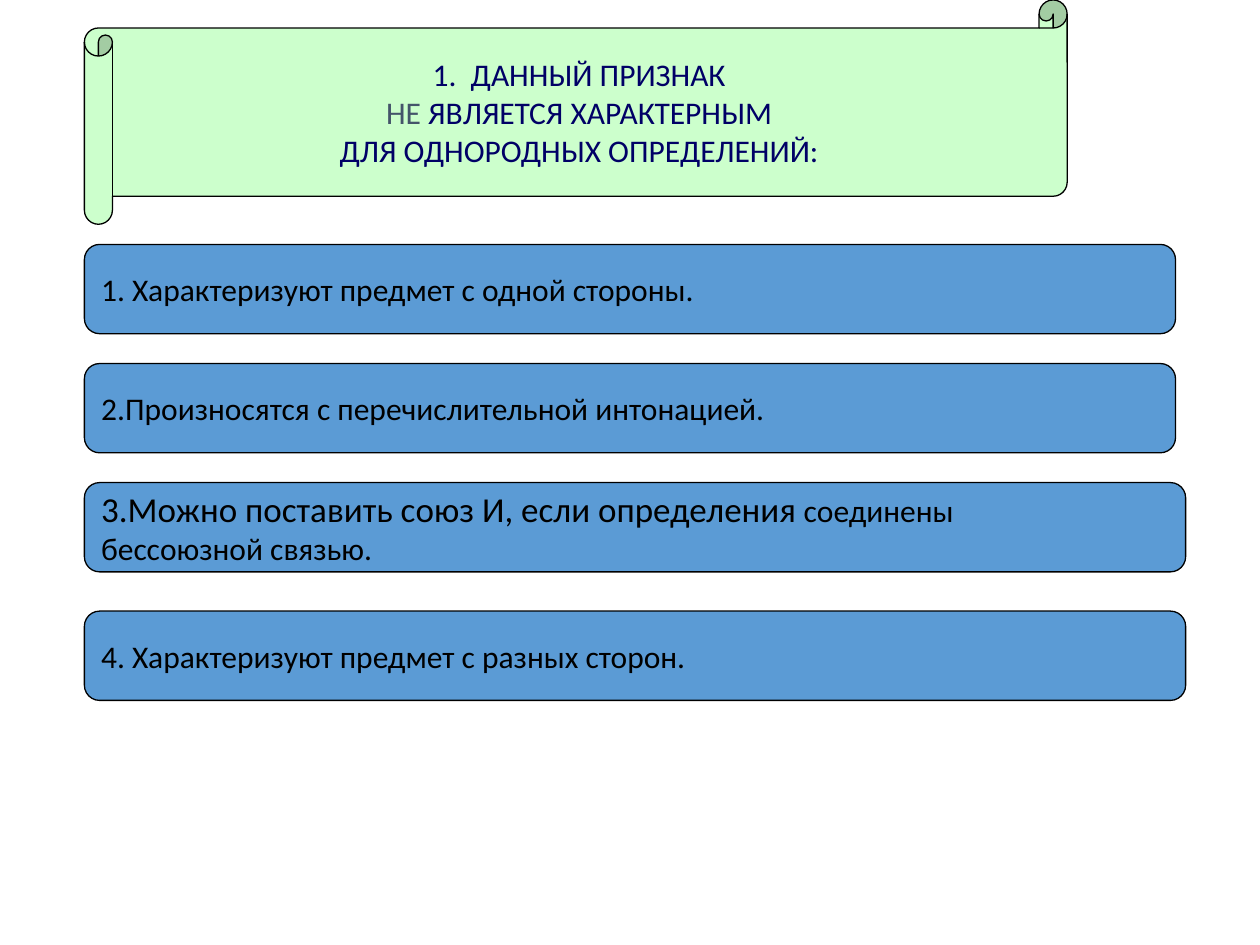
"""Build a quiz slide: a scroll with the question above four answer bars."""
from pptx import Presentation
from pptx.dml.color import RGBColor
from pptx.enum.shapes import MSO_SHAPE
from pptx.enum.text import MSO_ANCHOR, PP_ALIGN
from pptx.util import Inches, Pt

NAVY, SLATE, BLACK = "000066", "44546A", "000000"
MINT, BLUE = "CCFFCC", "5B9BD5"
LEFT = 6.7
FIRST_TOP, STEP, BAR_HEIGHT = 25.87, 12.6, 9.45
LAST_TOP = 64.67

QUESTION = [
    [("1.  ДАННЫЙ ПРИЗНАК ", 18, NAVY)],
    [("НЕ", 18, SLATE), (" ЯВЛЯЕТСЯ ХАРАКТЕРНЫМ ", 18, NAVY)],
    [("ДЛЯ ОДНОРОДНЫХ ОПРЕДЕЛЕНИЙ: ", 18, NAVY)],
]
ANSWERS = [
    (FIRST_TOP, 86.6, [[("1. Характеризуют предмет с одной стороны.", 18, BLACK)]]),
    (FIRST_TOP + STEP, 86.6, [[("2.Произносятся с перечислительной интонацией.", 18, BLACK)]]),
    (FIRST_TOP + 2 * STEP, 87.4, [
        [("3.Можно поставить союз И, если определения", 20, BLACK), (" соединены", 18, BLACK)],
        [("бессоюзной связью.", 18, BLACK)],
    ]),
    (LAST_TOP, 87.4, [[("4. Характеризуют предмет с разных сторон.", 18, BLACK)]]),
]


def color(value):
    return RGBColor.from_string(value)


class QuizPage:
    """Hold the style and the current slide; lengths are percent of its size."""

    font = "Calibri"

    def __init__(self, deck):
        self.deck = deck
        self.page = deck.slides.add_slide(deck.slide_layouts[6])

    def panel(self, kind, left, top, width, height, fill, adjustment):
        across, down = self.deck.slide_width / 100, self.deck.slide_height / 100
        shape = self.page.shapes.add_shape(
            kind, round(left * across), round(top * down),
            round(width * across), round(height * down))
        shape.adjustments[0] = adjustment
        shape.shadow.inherit = False
        shape.fill.solid()
        shape.fill.fore_color.rgb = color(fill)
        shape.line.color.rgb = color(BLACK)
        shape.line.width = Pt(0.75)
        return shape

    def label(self, shape, lines, alignment):
        frame = shape.text_frame
        frame.word_wrap = False
        frame.vertical_anchor = MSO_ANCHOR.MIDDLE
        frame.text = "\n".join("" for _ in lines)
        for paragraph, spans in zip(frame.paragraphs, lines):
            paragraph.alignment = alignment
            for text, size, ink in spans:
                span = paragraph.add_run()
                span.text = text
                span.font.name = self.font
                span.font.size = Pt(size)
                span.font.color.rgb = color(ink)
        return frame

    def scroll(self, lines):
        shape = self.panel(MSO_SHAPE.HORIZONTAL_SCROLL, LEFT, 0, 78, 23.73, MINT, 0.125)
        hanging = Inches(0.38)
        for paragraph in self.label(shape, lines, PP_ALIGN.CENTER).paragraphs:
            properties = paragraph._p.get_or_add_pPr()
            properties.set("marL", str(hanging))
            properties.set("indent", str(-hanging))

    def answer(self, top, width, lines):
        shape = self.panel(MSO_SHAPE.ROUNDED_RECTANGLE, LEFT, top, width, BAR_HEIGHT, BLUE, 0.17)
        self.label(shape, lines, PP_ALIGN.LEFT)


def main():
    deck = Presentation()
    deck.slide_width, deck.slide_height = Inches(10), Inches(7.5)
    quiz = QuizPage(deck)
    quiz.scroll(QUESTION)
    for top, width, lines in ANSWERS:
        quiz.answer(top, width, lines)
    deck.save("out.pptx")


if __name__ == "__main__":
    main()
